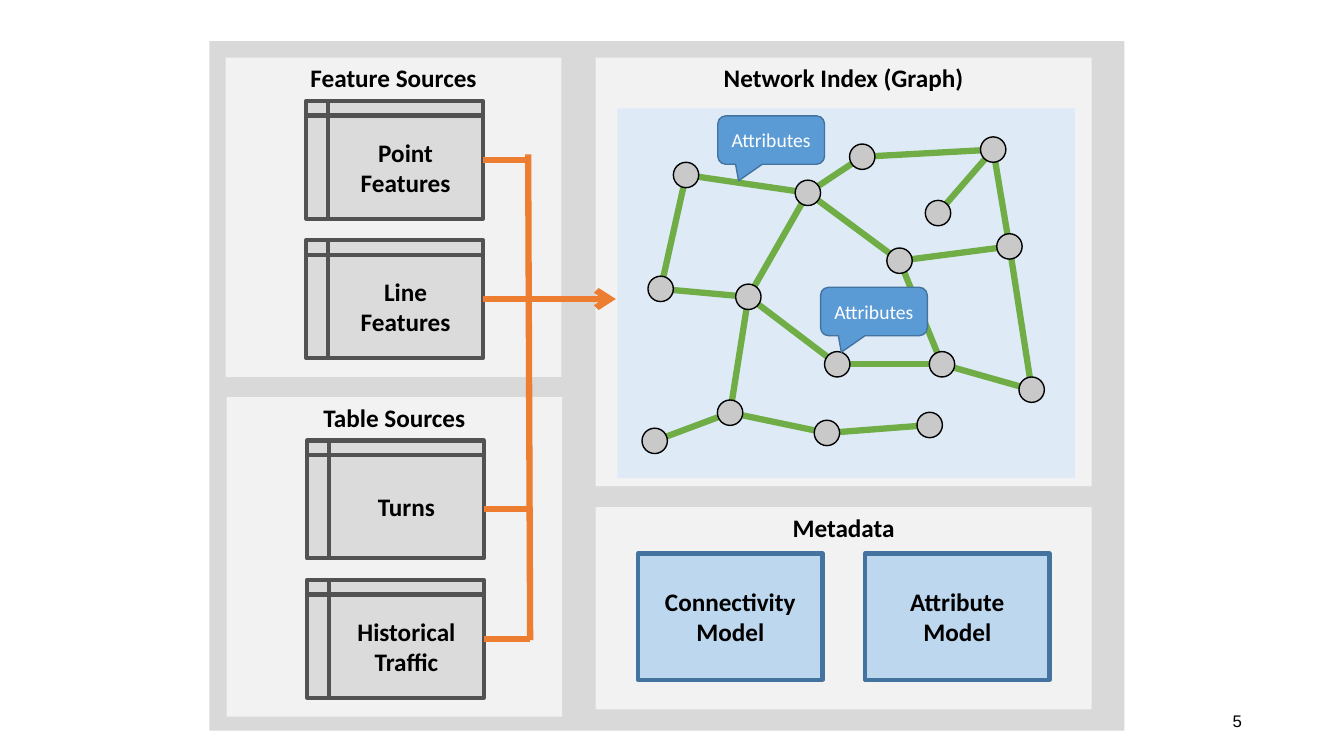
"""Build a slide on how sources feed a network graph and its metadata."""
from lxml import etree
from pptx import Presentation
from pptx import util as u
from pptx.dml import color
from pptx.enum import shapes, text
from pptx.oxml import ns

HUES = {
    "back": "D9D9D9", "panel": "F2F2F2", "canvas": "DEEBF7", "edge": "70AD47",
    "node": "C9C9C9", "store": "DBDBDB", "frame": "525252", "model": "BDD7EE",
    "rim": "43739E", "flow": "ED7D31", "call": "5B9BD5", "black": "000000",
    "white": "FFFFFF",
}
KIND = shapes.MSO_SHAPE
NODES = {
    "a": (1.73, 1.68), "b": (1.09, 4.55), "c": (3.3, 4.75), "d": (4.8, 2.13),
    "e": (6.17, 1.22), "f": (9.47, 1.04), "g": (8.08, 2.64), "h": (9.88, 3.48),
    "i": (7.11, 3.84), "j": (5.54, 6.45), "k": (8.18, 6.45), "l": (10.44, 7.09),
    "m": (2.84, 7.67), "n": (0.94, 8.38), "o": (5.28, 8.18), "p": (7.87, 7.98),
}
EDGES = "ab bc ad dc di de ef fg fh ih hl kl ki kj jc cm nm mo op".split()


def tint(name):
    """Return the named colour."""
    return color.RGBColor.from_string(HUES[name])


def write(shape, lines, size=18, ink="black", bold=True, top=False,
          align=text.PP_ALIGN.CENTER, font="Calibri"):
    """Fill a shape with one paragraph per line."""
    frame = shape.text_frame
    frame.word_wrap = True
    frame.vertical_anchor = text.MSO_ANCHOR.TOP if top else text.MSO_ANCHOR.MIDDLE
    for num, line in enumerate(lines):
        para = frame.add_paragraph() if num else frame.paragraphs[0]
        para.alignment = align
        run = para.add_run()
        run.text = line
        run.font.name, run.font.size, run.font.bold = font, u.Pt(size), bold
        run.font.color.rgb = tint(ink)


def block(page, box, fill, line=None, width=1, kind=KIND.RECTANGLE):
    """Draw a filled shape, outlined if a line colour is given."""
    shape = page.shapes.add_shape(kind, *map(u.Cm, box))
    shape.shadow.inherit = False
    shape.fill.solid()
    shape.fill.fore_color.rgb = tint(fill)
    if line:
        shape.line.color.rgb = tint(line)
        shape.line.width = u.Pt(width)
    else:
        shape.line.fill.background()
    return shape


def link(page, start, end, hue):
    """Draw a thick straight connector between two points."""
    line = page.shapes.add_connector(
        shapes.MSO_CONNECTOR.STRAIGHT, *start, *end)
    line.line.color.rgb = tint(hue)
    line.line.width = u.Pt(4.5)
    etree.SubElement(line._element.spPr, ns.qn("a:effectLst"))
    return line


def panel(page, box, title):
    """Draw a light panel with its title at the top."""
    write(block(page, box, "panel"), [title], top=True)


def source(page, box, title, names):
    """Draw a panel of stacked data stores and return the stores."""
    panel(page, box, title)
    left, top = box[:2]
    stores = []
    for row, lines in enumerate(names):
        spot = (left + 2.03, top + 1.09 + 3.51 * row, 4.45, 2.97)
        store = block(page, spot, "store", "frame", 3,
                      KIND.FLOWCHART_INTERNAL_STORAGE)
        write(store, lines)
        stores.append(store)
    return stores


def graph(page, box):
    """Draw the network panel with its edges, nodes and callouts."""
    panel(page, box, "Network Index (Graph)")
    left, top = box[0] + 0.55, box[1] + 1.28
    block(page, (left, top, 11.53, 9.32), "canvas")
    spots = {key: (left + x, top + y) for key, (x, y) in NODES.items()}
    for tail, head in EDGES:
        link(page, map(u.Cm, spots[tail]), map(u.Cm, spots[head]), "edge")
    size = 0.64
    for x, y in spots.values():
        block(page, (x - size / 2, y - size / 2, size, size), "node", "black",
              kind=KIND.OVAL)
    for x, y in ((2.53, 0.19), (5.12, 4.51)):
        call = block(page, (left + x, top + y, 2.69, 1.22), "call", "rim",
                     kind=KIND.ROUNDED_RECTANGULAR_CALLOUT)
        for num, value in enumerate((-0.305, 0.841, 0.167)):
            call.adjustments[num] = value
        write(call, ["Attributes"], 14, "white", False)


def meta(page, box):
    """Draw the metadata panel with its two models."""
    panel(page, box, "Metadata")
    for col, name in enumerate(("Connectivity", "Attribute")):
        spot = (box[0] + 1.07 + 5.72 * col, box[1] + 1.17, 4.65, 3.18)
        write(block(page, spot, "model", "rim", 3), [name, "Model"])


def flow(page, box, stores):
    """Join the stores to a bus and point an arrow at the graph."""
    left, top, width, high = box
    bus = u.Cm(left)
    point, line, turns, past = stores
    for store, end in ((point, bus), (line, u.Cm(left + width)),
                       (turns, bus), (past, u.Cm(left + 0.05))):
        x, y = store.left + store.width, store.top + store.height // 2
        if store is turns:
            y += u.Cm(0.24)
        arm = link(page, (x, y), (end, y), "flow")
        if store is not turns:
            arm.begin_connect(store, 3)
        if store is line:
            etree.SubElement(arm.line._get_or_add_ln(), ns.qn("a:tailEnd"),
                             type="arrow")
    link(page, (bus, u.Cm(top)), (u.Cm(left + 0.05), u.Cm(top + high)), "flow")


def number(page, box):
    """Write the page number."""
    write(page.shapes.add_textbox(*map(u.Cm, box)), ["5"], 12, bold=False,
          align=text.PP_ALIGN.RIGHT, font="Arial")


def main():
    """Build and save the slide."""
    deck = Presentation()
    deck.slide_width, deck.slide_height = u.Cm(33.87), u.Cm(19.05)
    page = deck.slides.add_slide(deck.slide_layouts[6])
    number(page, (23.93, 17.65, 7.62, 1.02))
    block(page, (5.28, 1.04, 23.06, 17.37), "back")
    graph(page, (15.01, 1.45, 12.5, 10.8))
    meta(page, (15.01, 12.78, 12.5, 5.1))
    stores = source(page, (5.69, 1.45, 8.46, 8.05), "Feature Sources",
                    (["Point Features"], ["Line Features"]))
    stores += source(page, (5.71, 10.01, 8.46, 8.05), "Table Sources",
                     (["Turns"], ["Historical", "Traffic"]))
    flow(page, (13.31, 3.89, 2.21, 12.24), stores)
    deck.save("out.pptx")


if __name__ == "__main__":
    main()
